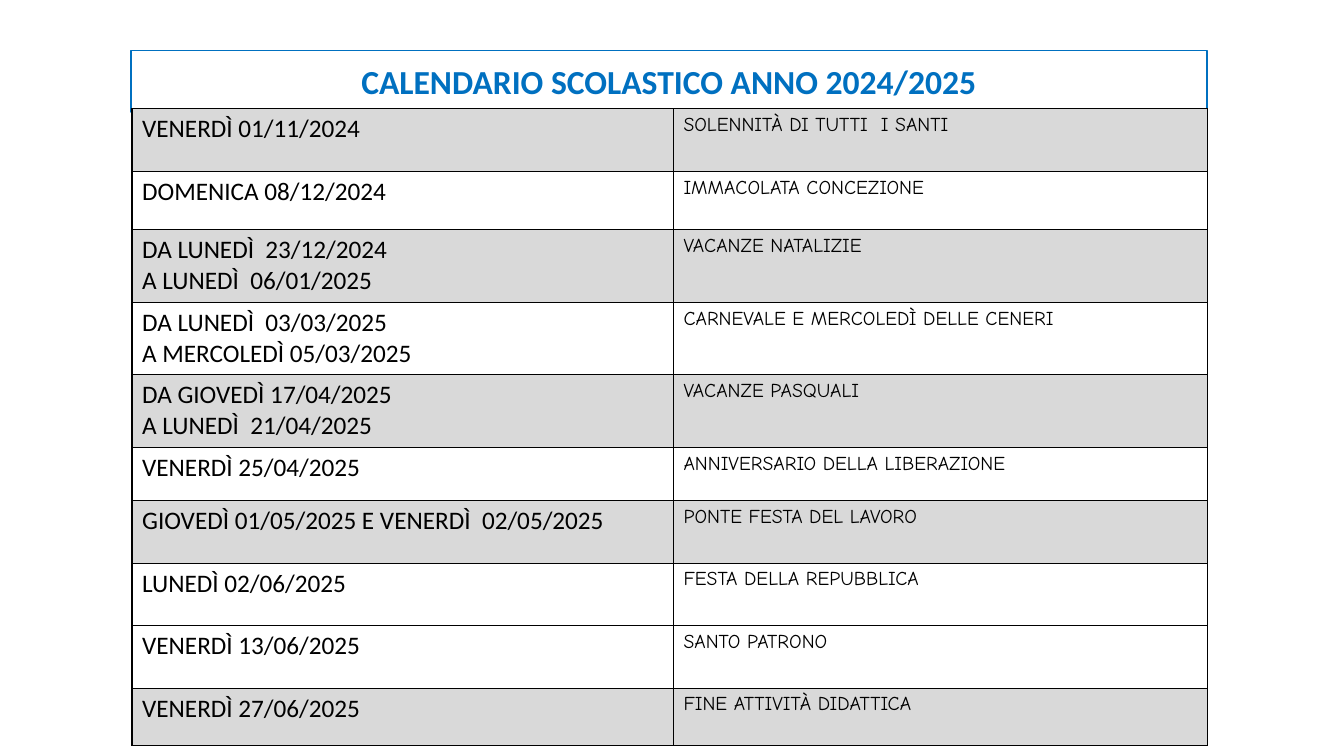
"""Builds the school calendar slide for 2024/2025."""
from lxml.etree import SubElement
from pptx import Presentation
from pptx.dml.color import RGBColor
from pptx.enum.text import MSO_ANCHOR, MSO_AUTO_SIZE, PP_ALIGN
from pptx.oxml.ns import qn
from pptx.util import Inches, Pt

BLUE = RGBColor(0x00, 0x70, 0xC0)
BLACK = RGBColor(0x00, 0x00, 0x00)
WHITE = RGBColor(0xFF, 0xFF, 0xFF)
GREY = RGBColor(0xD9, 0xD9, 0xD9)

COLUMN_WIDTHS = (5.37, 5.3)
CALENDAR = [
    (0.62, GREY, "VENERDÌ 01/11/2024", "SOLENNITÀ DI TUTTI  I SANTI"),
    (0.58, WHITE, "DOMENICA 08/12/2024", "IMMACOLATA CONCEZIONE"),
    (0.72, GREY, "DA LUNEDÌ  23/12/2024\nA LUNEDÌ  06/01/2025", "VACANZE NATALIZIE"),
    (0.72, WHITE, "DA LUNEDÌ  03/03/2025\nA MERCOLEDÌ 05/03/2025",
     "CARNEVALE E MERCOLEDÌ DELLE CENERI"),
    (0.72, GREY, "DA GIOVEDÌ 17/04/2025\nA LUNEDÌ  21/04/2025", "VACANZE PASQUALI"),
    (0.53, WHITE, "VENERDÌ 25/04/2025", "ANNIVERSARIO DELLA LIBERAZIONE"),
    (0.62, GREY, "GIOVEDÌ 01/05/2025 E VENERDÌ  02/05/2025", "PONTE FESTA DEL LAVORO"),
    (0.62, WHITE, "LUNEDÌ 02/06/2025", "FESTA DELLA REPUBBLICA"),
    (0.62, WHITE, "VENERDÌ 13/06/2025", "SANTO PATRONO"),
    (0.57, GREY, "VENERDÌ 27/06/2025", "FINE ATTIVITÀ DIDATTICA"),
]


class CalendarSlide:
    """Holds the style and the current slide."""

    date_style = ("Calibri", 18)
    event_style = ("Comic Neue", 14)
    title_style = ("Calibri", 24)

    def __init__(self, presentation):
        self.slide = presentation.slides.add_slide(presentation.slide_layouts[5])

    def format_text(self, text_frame, style, color, bold=False):
        name, size = style
        for paragraph in text_frame.paragraphs:
            for run in paragraph.runs:
                run.font.name = name
                run.font.size = Pt(size)
                run.font.bold = bold
                run.font.color.rgb = color

    def add_title(self, text, left, top, width, height):
        title = self.slide.shapes.title
        title.left, title.top = Inches(left), Inches(top)
        title.width, title.height = Inches(width), Inches(height)
        title.fill.solid()
        title.fill.fore_color.rgb = WHITE
        title.line.color.rgb = BLUE
        title.line.width = Pt(1)
        text_frame = title.text_frame
        text_frame.text = text
        text_frame.word_wrap = True
        text_frame.auto_size = MSO_AUTO_SIZE.NONE
        text_frame.vertical_anchor = MSO_ANCHOR.MIDDLE
        text_frame.paragraphs[0].alignment = PP_ALIGN.CENTER
        self.format_text(text_frame, self.title_style, BLUE, bold=True)

    def add_borders(self, cell):
        properties = cell._tc.get_or_add_tcPr()
        for side in ("a:lnL", "a:lnR", "a:lnT", "a:lnB"):
            line = SubElement(properties, qn(side), w=str(Pt(1)))
            fill = SubElement(line, qn("a:solidFill"))
            SubElement(fill, qn("a:srgbClr"), val=str(BLACK))

    def add_calendar(self, rows, left, top):
        width = sum(COLUMN_WIDTHS)
        height = sum(row[0] for row in rows)
        table = self.slide.shapes.add_table(
            len(rows), len(COLUMN_WIDTHS),
            Inches(left), Inches(top), Inches(width), Inches(height)).table
        table.first_row = False
        table.horz_banding = False
        for column, column_width in zip(table.columns, COLUMN_WIDTHS):
            column.width = Inches(column_width)
        for row, (row_height, color, *texts) in zip(table.rows, rows):
            row.height = Inches(row_height)
            styles = (self.date_style, self.event_style)
            for cell, text, style in zip(row.cells, texts, styles):
                self.add_borders(cell)
                cell.fill.solid()
                cell.fill.fore_color.rgb = color
                cell.text_frame.text = text
                self.format_text(cell.text_frame, style, BLACK)


def main():
    presentation = Presentation()
    presentation.slide_width = Inches(13.33)
    presentation.slide_height = Inches(7.5)
    calendar = CalendarSlide(presentation)
    calendar.add_title("CALENDARIO SCOLASTICO ANNO 2024/2025", 1.3, 0.5, 10.67, 0.61)
    calendar.add_calendar(CALENDAR, 1.31, 1.08)
    presentation.save("out.pptx")


if __name__ == "__main__":
    main()
